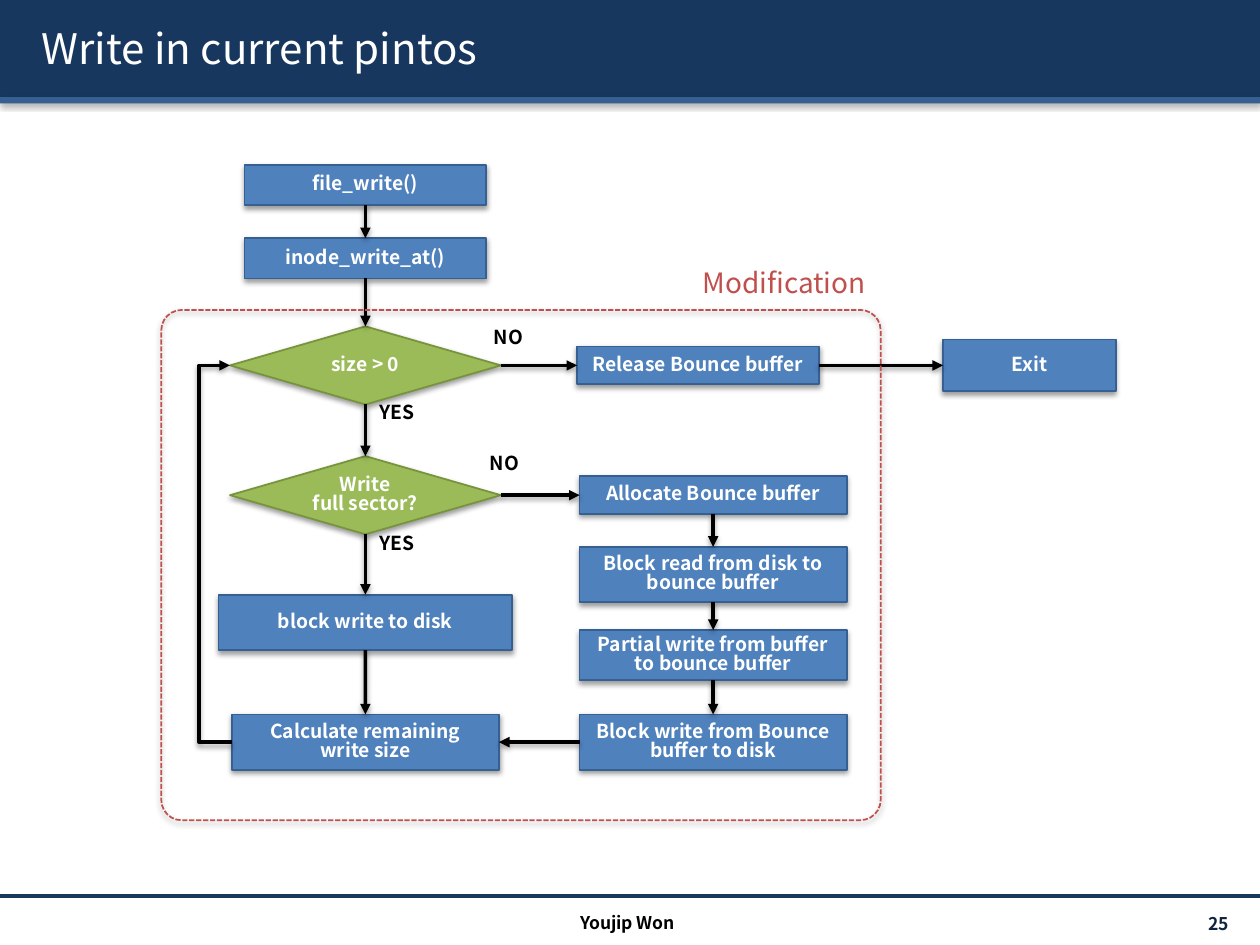
from lxml import etree
from pptx import Presentation
from pptx.dml.color import RGBColor
from pptx.enum.dml import MSO_LINE
from pptx.enum.shapes import MSO_CONNECTOR, MSO_SHAPE
from pptx.enum.text import MSO_ANCHOR, PP_ALIGN
from pptx.oxml import parse_xml
from pptx.oxml.ns import qn
from pptx.util import Inches, Pt

RECT, DIAMOND, ROUND = MSO_SHAPE.RECTANGLE, MSO_SHAPE.DIAMOND, MSO_SHAPE.ROUNDED_RECTANGLE
LEFT, MID, RIGHT = PP_ALIGN.LEFT, PP_ALIGN.CENTER, PP_ALIGN.RIGHT
TOP, CENTER = MSO_ANCHOR.TOP, MSO_ANCHOR.MIDDLE
STRAIGHT, ELBOW = MSO_CONNECTOR.STRAIGHT, MSO_CONNECTOR.ELBOW
DASH = MSO_LINE.SQUARE_DOT

FONT = "Noto Sans CJK KR"
COLORS = {"navy": "17375E", "edge": "376092", "blue": "4F81BD", "green": "9BBB59",
          "olive": "77933C", "red": "C0504D", "black": "000000", "white": "FFFFFF",
          "ink": "0F243E"}
TITLE = "Write in current pintos"
COL_A, COL_B = 2.9, 5.66
NODES = {
    "file": ("file_write()", COL_A, 1.47, 1.92, 0.32),
    "inode": ("inode_write_at()", COL_A, 2.05, 1.92, 0.32),
    "size": ("size > 0", COL_A, 2.9, 2.15, 0.62),
    "full": ("Write\nfull sector?", COL_A, 3.93, 2.15, 0.62),
    "disk": ("block write to disk", COL_A, 4.94, 2.33, 0.44),
    "calc": ("Calculate remaining write size", COL_A, 5.89, 2.12, 0.44),
    "free": ("Release Bounce buffer", 5.54, 2.9, 1.92, 0.3),
    "exit": ("Exit", 8.17, 2.9, 1.37, 0.41),
    "alloc": ("Allocate Bounce buffer", COL_B, 3.93, 2.12, 0.3),
    "read": ("Block read from disk to bounce buffer", COL_B, 4.56, 2.12, 0.44),
    "part": ("Partial write from buffer to bounce buffer", COL_B, 5.2, 2.12, 0.4),
    "write": ("Block write from Bounce buffer to disk", COL_B, 5.89, 2.12, 0.44),
}
CHOICES = ("size", "full")
DOWN, ACROSS, BACK = (2, 0), (3, 1), (1, 3)
CHAINS = [
    (DOWN, ("file", "inode", "size", "full", "disk", "calc")),
    (DOWN, ("alloc", "read", "part", "write")),
    (ACROSS, ("size", "free", "exit")),
    (ACROSS, ("full", "alloc")),
    (BACK, ("write", "calc")),
]
LABELS = [("YES", 2.86, 3.16), ("YES", 2.86, 4.2), ("NO", 3.82, 2.56), ("NO", 3.79, 3.56)]
LOOP_X = 1.58


def color(name):
    return RGBColor.from_string(COLORS[name])


def shadow():
    return parse_xml(
        '<a:effectLst xmlns:a="http://schemas.openxmlformats.org/drawingml/2006/main">'
        '<a:outerShdw blurRad="39370" dist="20320" dir="5400000" rotWithShape="0">'
        '<a:srgbClr val="000000"><a:alpha val="38000"/></a:srgbClr>'
        '</a:outerShdw></a:effectLst>')


def write(shape, text, size=11, tint="white", bold=True, align=MID, anchor=CENTER,
          wrap=True, gap=0.83):
    frame = shape.text_frame
    frame.text = text
    frame.word_wrap = wrap
    frame.vertical_anchor = anchor
    for para in frame.paragraphs:
        para.alignment = align
        para.line_spacing = gap
        for run in para.runs:
            font = run.font
            font.name, font.size, font.bold = FONT, Pt(size), bold
            font.color.rgb = color(tint)


def place(shape, *spot):
    shape.left, shape.top, shape.width, shape.height = map(Inches, spot)


def block(shapes, kind, *spot, fill=None, line=None):
    shape = shapes.add_shape(kind, *map(Inches, spot))
    if fill:
        shape.fill.solid()
        shape.fill.fore_color.rgb = color(fill)
    else:
        shape.fill.background()
    if line:
        shape.line.color.rgb = color(line)
        shape.line.width = Pt(1)
    else:
        shape.line.fill.background()
    shape.shadow.inherit = False
    old = shape._element.spPr.find(qn("a:effectLst"))
    old.getparent().replace(old, shadow())
    return shape


def label(shapes, text, *spot, **style):
    write(shapes.add_textbox(*map(Inches, spot)), text, **style)


def stroke(shapes, kind, *ends, tint="black", head=True):
    link = shapes.add_connector(kind, *map(Inches, ends))
    link.line.color.rgb = color(tint)
    link.line.width = Pt(2)
    if head:
        etree.SubElement(link.line._get_or_add_ln(), qn("a:tailEnd"), type="triangle")
        link._element.spPr.append(shadow())
    else:
        etree.SubElement(link._element.spPr, qn("a:effectLst"))
    return link


def frame(slide):
    shapes, title = slide.shapes, slide.shapes.title
    block(shapes, RECT, 0, 0, 10, 0.77, fill="navy")
    block(shapes, RECT, 0, 0.77, 10, 0.05, fill="edge")
    stroke(shapes, STRAIGHT, 0, 7.11, 10, 7.11, tint="navy", head=False)
    place(title, 0.23, 0.06, 9.61, 0.64)
    write(title, TITLE, size=24, bold=False, align=LEFT, gap=1)
    props = title.text_frame.paragraphs[0].runs[0]._r.rPr
    props.find(qn("a:solidFill")).addnext(shadow())
    shapes._spTree.append(title._element)
    label(shapes, "25", 8.71, 7.21, 1.14, 0.24, size=10, tint="ink", align=RIGHT, gap=1)
    label(shapes, "Youjip Won", 3.32, 7.2, 3.32, 0.24, size=10, tint="black", gap=1)


def chart(shapes):
    nodes = {}
    for name, (text, mid, row, wide, high) in NODES.items():
        kind, fill, line = ((DIAMOND, "green", "olive") if name in CHOICES
                            else (RECT, "blue", "edge"))
        nodes[name] = block(shapes, kind, mid - wide / 2, row - high / 2, wide, high,
                            fill=fill, line=line)
        write(nodes[name], text)
    for (start, end), names in CHAINS:
        for one, two in zip(names, names[1:]):
            link = stroke(shapes, STRAIGHT, 0, 0, 1, 1)
            link.begin_connect(nodes[one], start)
            link.end_connect(nodes[two], end)
    (_, mid, low, wide, _), (_, _, high, span, _) = NODES["calc"], NODES["size"]
    near, far = mid - wide / 2, mid - span / 2
    loop = stroke(shapes, ELBOW, near, low, far, high)
    bend = round((near - LOOP_X) / (near - far) * 100000)
    guides = loop._element.spPr.find(qn("a:prstGeom")).get_or_add_avLst()
    etree.SubElement(guides, qn("a:gd"), name="adj1", fmla=f"val {bend}")
    for text, left, top in LABELS:
        yes = text == "YES"
        label(shapes, text, left, top, 0.58 if yes else 0.52, 0.32, tint="black",
              align=MID if yes else LEFT, anchor=TOP, wrap=yes)


def main():
    deck = Presentation()
    deck.slide_width, deck.slide_height = Inches(10), Inches(7.5)
    slide = deck.slides.add_slide(deck.slide_layouts[5])
    frame(slide)
    chart(slide.shapes)
    zone = block(slide.shapes, ROUND, 1.28, 2.46, 5.71, 4.05, line="red")
    zone.adjustments[0] = 0.04
    zone.line.dash_style = DASH
    label(slide.shapes, "Modification", 5.48, 2.09, 1.52, 0.37, size=16, tint="red",
          bold=False, align=LEFT, anchor=TOP, wrap=False, gap=0.9)
    deck.save("out.pptx")


if __name__ == "__main__":
    main()
